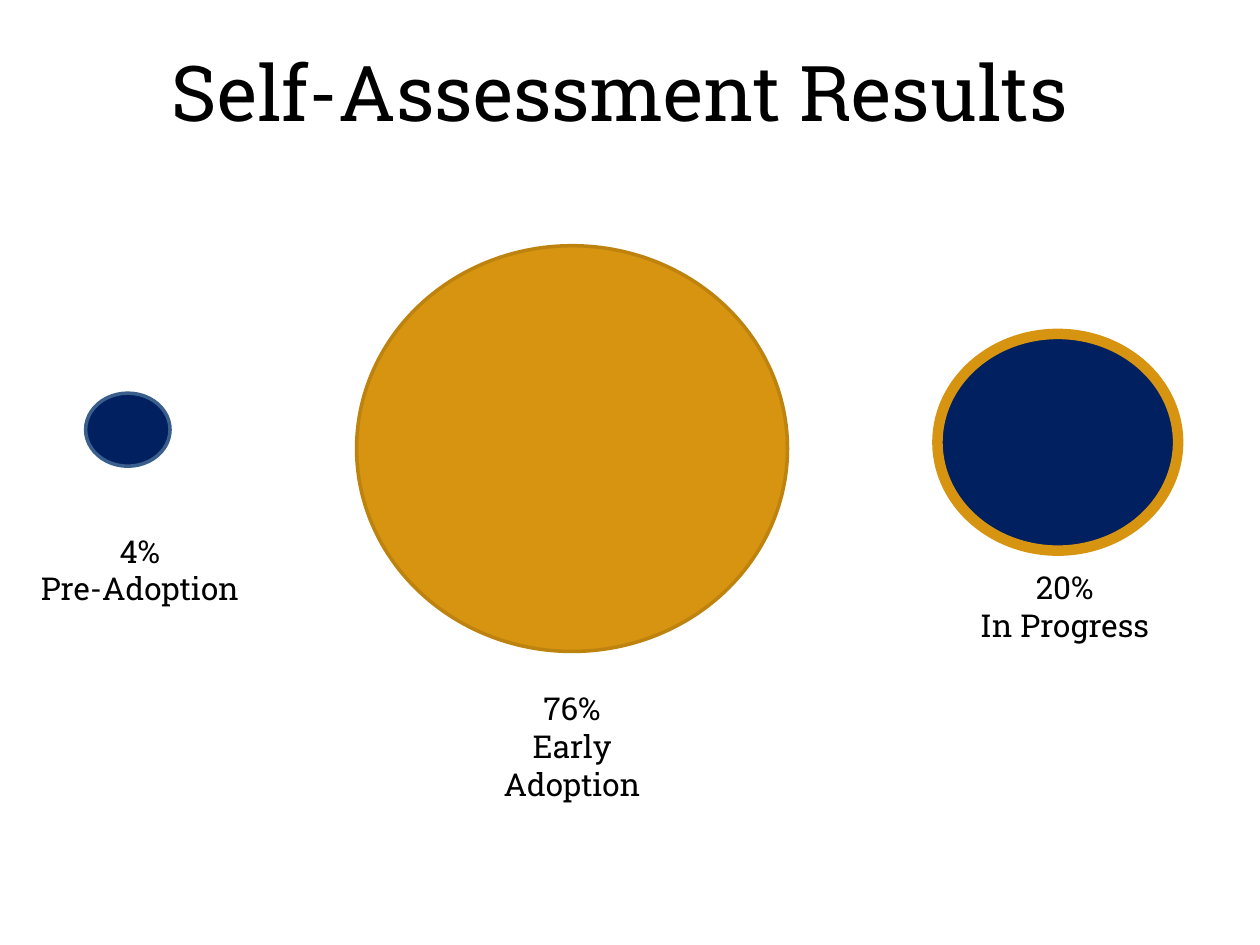
from pptx import Presentation
from pptx.dml.color import RGBColor
from pptx.enum.shapes import MSO_SHAPE
from pptx.enum.text import MSO_ANCHOR, PP_ALIGN
from pptx.util import Inches, Pt

FONT = "Roboto Slab"
NAVY, GOLD = "002060", "D69410"
TITLE = "Self-Assessment Results "
LABEL_WIDTH = 1.78

STAGES = [
    {"lines": ["4%", "Pre-Adoption"], "circle": (0.68, 3.12, 0.67, 0.58),
     "fill": NAVY, "line": "3A5F8C", "weight": 2, "label": (0.22, 4.17, LABEL_WIDTH, 1.01)},
    {"lines": ["76%", "Early Adoption"], "circle": (2.83, 1.95, 3.42, 3.22),
     "fill": GOLD, "line": "BE830E", "weight": 2, "label": (3.65, 5.42, LABEL_WIDTH, 1.31)},
    {"lines": ["20%", "In Progress"], "circle": (7.44, 2.65, 1.91, 1.72),
     "fill": NAVY, "line": GOLD, "weight": 6, "label": (7.56, 4.46, LABEL_WIDTH, 1.01)},
]


def color(value):
    return RGBColor.from_string(value)


def write_lines(frame, lines, size):
    frame.word_wrap = True
    frame.vertical_anchor = MSO_ANCHOR.TOP
    text_format = {"name": FONT, "size": Pt(size), "bold": False}
    for index, line in enumerate(lines):
        para = frame.add_paragraph() if index else frame.paragraphs[0]
        para.alignment = PP_ALIGN.CENTER
        span = para.add_run()
        span.text = line
        for name, value in text_format.items():
            setattr(span.font, name, value)
        span.font.color.rgb = color("000000")


def add_stage(page, stage):
    circle = page.shapes.add_shape(MSO_SHAPE.OVAL, *map(Inches, stage["circle"]))
    circle.shadow.inherit = False
    circle.fill.solid()
    circle.fill.fore_color.rgb = color(stage["fill"])
    circle.line.color.rgb = color(stage["line"])
    circle.line.width = Pt(stage["weight"])
    label = page.shapes.add_textbox(*map(Inches, stage["label"]))
    write_lines(label.text_frame, stage["lines"], 18)


def main():
    deck = Presentation()
    deck.slide_width, deck.slide_height = Inches(10), Inches(7.5)
    page = deck.slides.add_slide(deck.slide_layouts[5])
    title = page.shapes.title
    title.left, title.top, title.width, title.height = map(Inches, (0.5, 0.3, 9, 1.25))
    write_lines(title.text_frame, [TITLE], 44)
    for stage in STAGES:
        add_stage(page, stage)
    deck.save("out.pptx")


if __name__ == "__main__":
    main()
